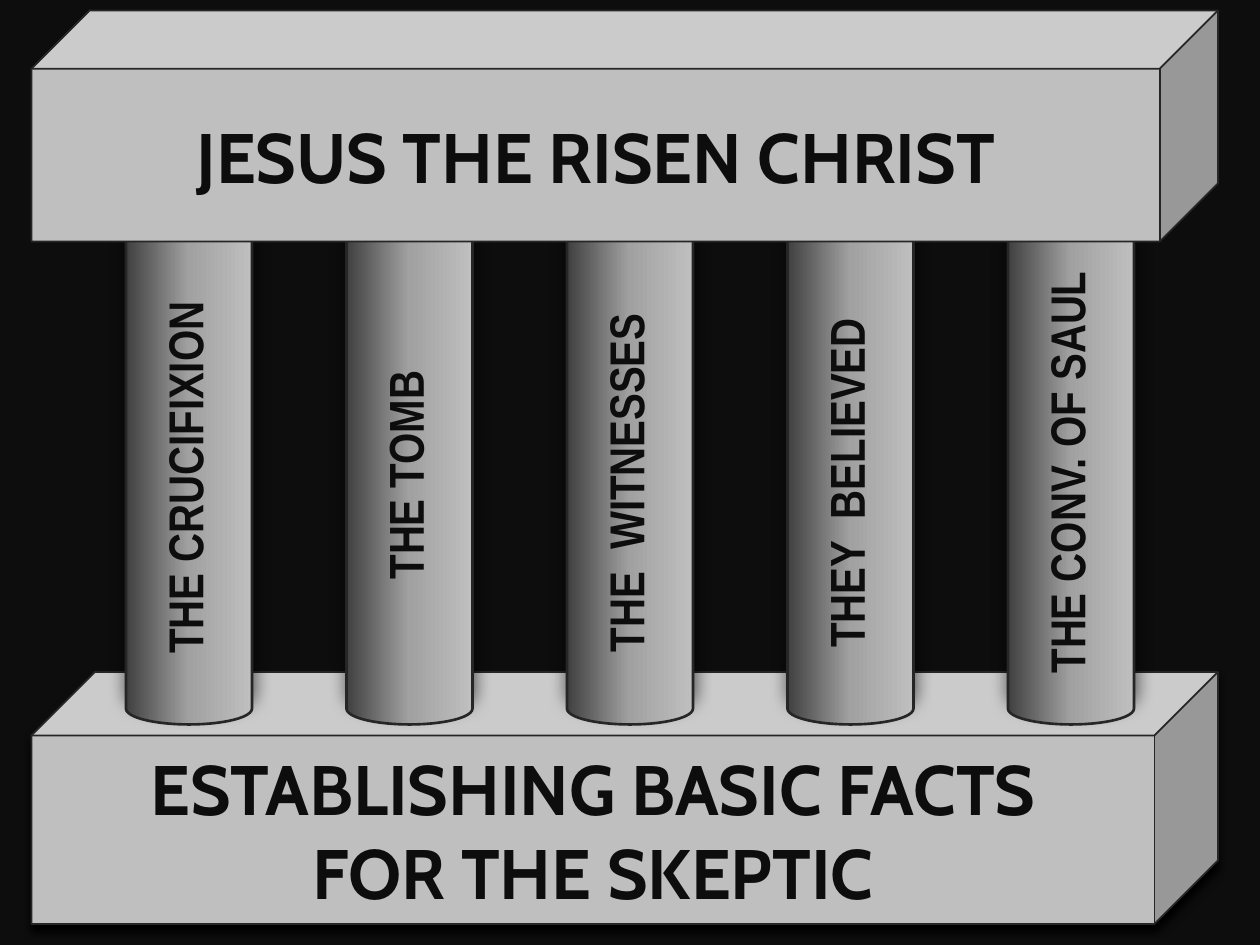
from copy import deepcopy
from lxml.etree import SubElement
from pptx import Presentation
from pptx.dml.color import RGBColor
from pptx.enum.shapes import MSO_SHAPE
from pptx.enum.text import MSO_ANCHOR, PP_ALIGN
from pptx.oxml.ns import qn
from pptx.util import Inches, Pt

INK = {"night": "0D0D0D", "stone": "BFBFBF", "edge": "262626",
       "dark": "404040", "mid": "A1A1A1", "shade": "000000"}
UNIT = 1 / 12  # grid of 120 columns by 90 rows


def rgb(name):
    return RGBColor.from_string(INK[name])


class Temple:
    def __init__(self, slide):
        self.slide = slide

    def box(self, *cells):
        return [Inches(c * UNIT) for c in cells]

    def solid(self, kind, cells, fill, line=None):
        shape = self.slide.shapes.add_shape(kind, *self.box(*cells))
        shape.shadow.inherit = False
        if fill:
            shape.fill.solid()
            shape.fill.fore_color.rgb = rgb(fill)
        if line:
            shape.line.color.rgb = rgb("edge")
            shape.line.width = Pt(line)
        else:
            shape.line.fill.background()
        return shape

    def shade(self, shape, alpha, blur, dist, angle):
        effects = shape.element.spPr.find(qn("a:effectLst"))
        outer = SubElement(effects, qn("a:outerShdw"), blurRad=str(Pt(blur)),
                           dist=str(Pt(dist)), dir=str(angle * 60000),
                           algn="ctr", rotWithShape="0")
        color = SubElement(outer, qn("a:srgbClr"), val=INK["shade"])
        SubElement(color, qn("a:alpha"), val=str(alpha * 1000))

    def letter(self, shape, lines, size, font):
        frame = shape.text_frame
        frame.word_wrap = True
        frame.vertical_anchor = MSO_ANCHOR.MIDDLE
        para = frame.paragraphs[0]
        para.alignment = PP_ALIGN.CENTER
        for n, line in enumerate(lines):
            if n:
                para.add_line_break()
            run = para.add_run()
            run.text = line
            run.font.size = Pt(size)
            run.font.name = font
            run.font.bold = True
            run.font.color.rgb = rgb("night")

    def beam(self, top, high, *lines):
        shape = self.solid(MSO_SHAPE.CUBE, (3, top, 113, high), "stone", 1)
        shape.adjustments[0] = 0.252
        self.letter(shape, lines, 40, "Cabin")
        return shape

    def pillar(self, left):
        shape = self.solid(MSO_SHAPE.CAN, (left, 16, 12, 53), None, 1.5)
        shape.fill.gradient()
        shape.fill.gradient_angle = 0
        stops = shape.element.spPr.find(".//" + qn("a:gsLst"))
        stops.append(deepcopy(stops[-1]))
        tones = zip(shape.fill.gradient_stops, (0, 0.5, 1),
                    ("dark", "mid", "stone"))
        for stop, place, tone in tones:
            stop.position = place
            stop.color.rgb = rgb(tone)
        self.shade(shape, 62, 10, 8, 272)

    def label(self, text, x, y, wide, high):
        cells = (x - wide / 2, y - high / 2, wide, high)
        shape = self.slide.shapes.add_textbox(*self.box(*cells))
        shape.rotation = 270
        self.letter(shape, [text], 28, "Arial Narrow")


def main():
    deck = Presentation()
    deck.slide_width, deck.slide_height = Inches(10), Inches(7.5)
    art = Temple(deck.slides.add_slide(deck.slide_layouts[6]))

    # Backdrop and base
    art.solid(MSO_SHAPE.RECTANGLE, (0, 0, 120, 90), "night")
    base = art.beam(64, 24, "ESTABLISHING BASIC FACTS", "FOR THE SKEPTIC")
    art.shade(base, 100, 4, 4, 90)

    # Pillars, right to left, then the roof over them
    first, pitch = 12, 21
    for n in reversed(range(5)):
        art.pillar(first + n * pitch)
    art.beam(1, 22, "JESUS THE RISEN CHRIST")

    # Pillar labels: text, centre row, length, height
    facts = [("THE CRUCIFIXION", 45.5, 43, 9),
             ("THE TOMB", 45.25, 46, 9),
             ("THE  WITNESSES", 46, 46, 9),
             ("THEY  BELIEVED", 46, 46, 9),
             ("THE CONV. OF SAUL", 45, 46, 8)]
    for n, (text, row, wide, high) in enumerate(facts):
        art.label(text, first + 5.5 + n * pitch, row, wide, high)

    deck.save("out.pptx")


if __name__ == "__main__":
    main()
